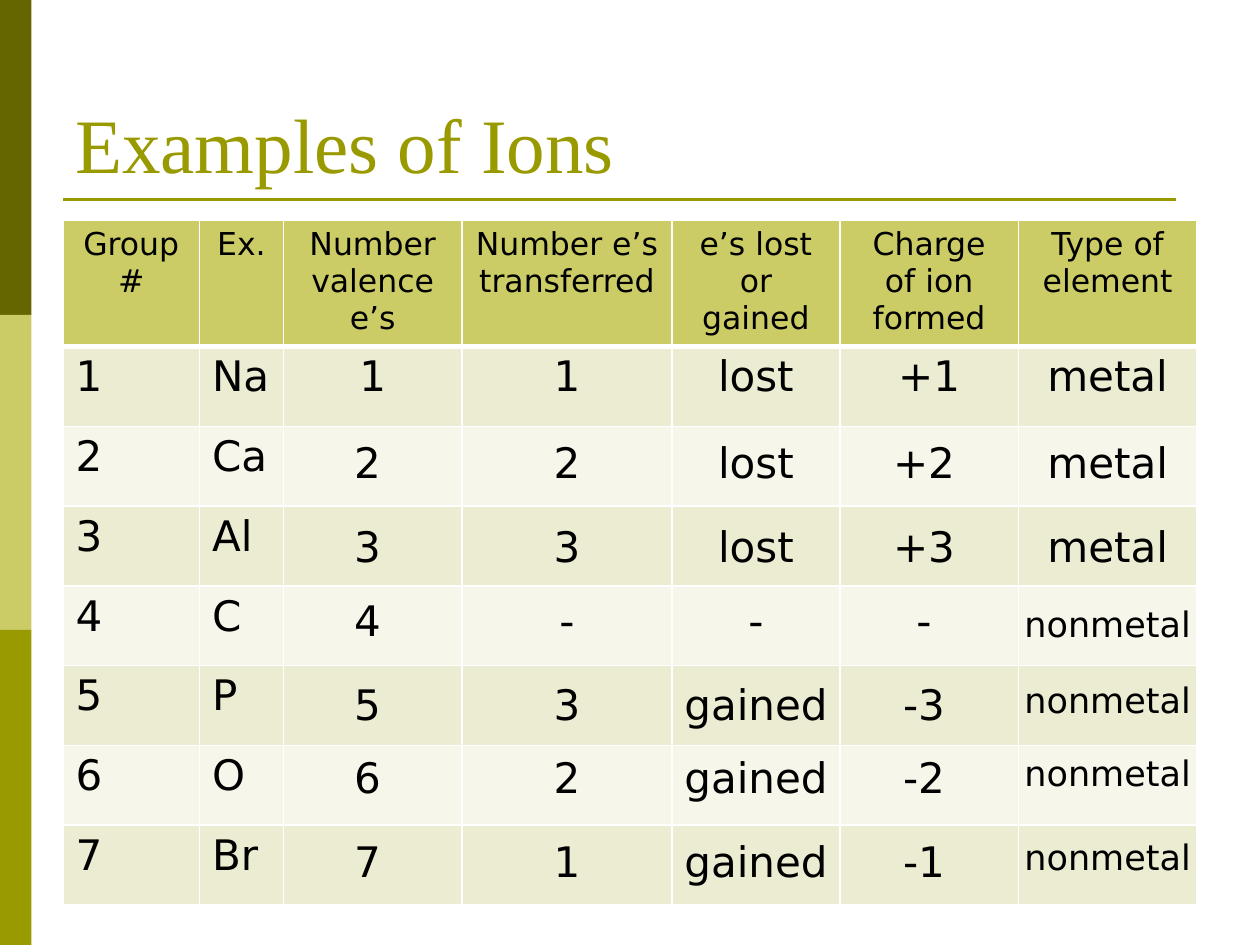
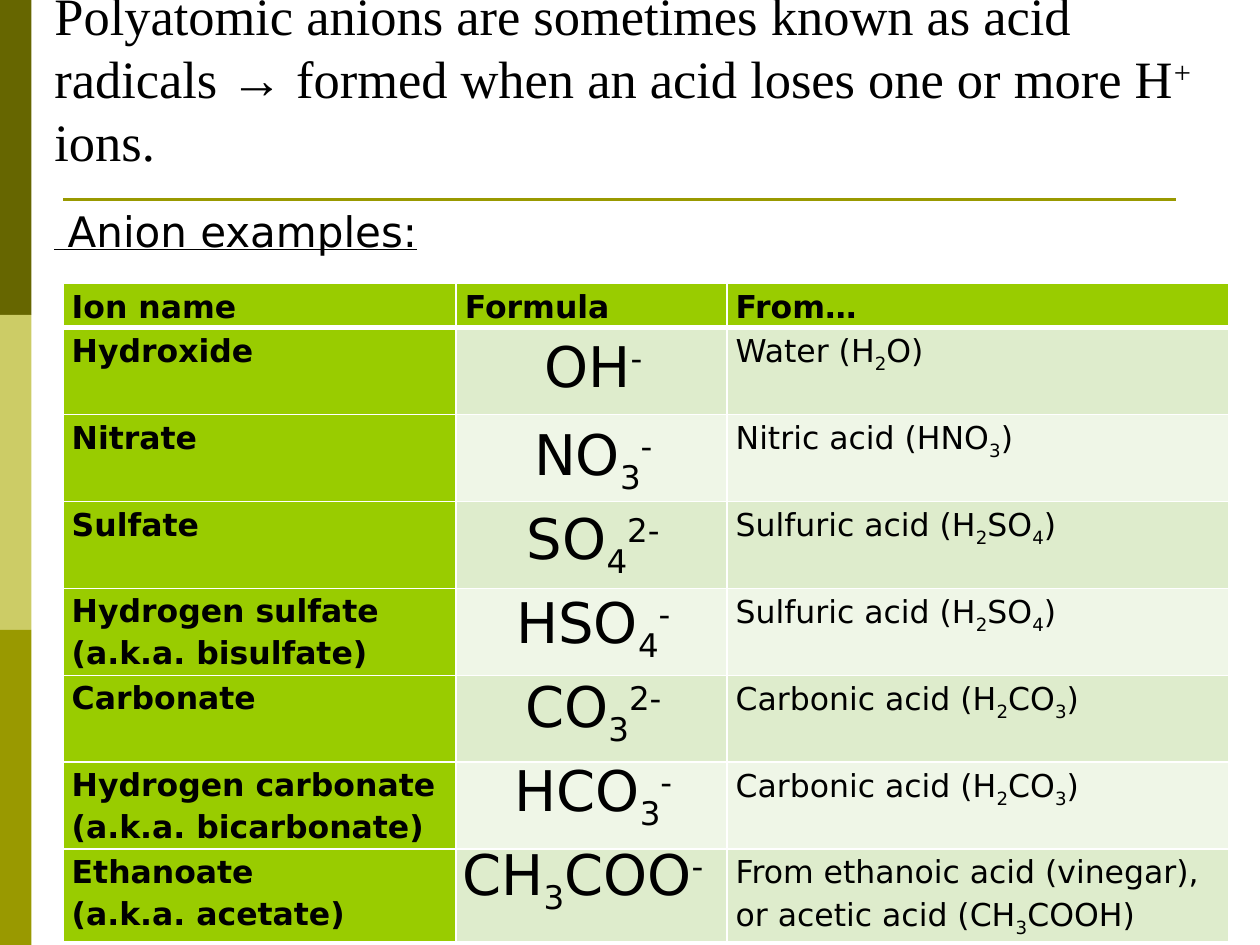
from lxml.etree import SubElement
from pptx import Presentation
from pptx.dml.color import RGBColor
from pptx.enum.shapes import MSO_CONNECTOR, MSO_SHAPE
from pptx.enum.text import MSO_ANCHOR, PP_ALIGN
from pptx.oxml import parse_xml
from pptx.oxml.ns import nsdecls, qn
from pptx.util import Pt

# Shared look
DARK_OLIVE, LIGHT_OLIVE, OLIVE = "666600", "CCCC66", "999900"
LIME, BLACK, WHITE = "99CC00", "000000", "FFFFFF"
OLIVE_BANDS = ("ECECD3", "F6F6EA")
LIME_BANDS = ("DEECCC", "EFF6E7")
BODY_FONT, TITLE_FONT = "DejaVu Sans", "Times New Roman"
BASELINES = {"_": "-25000", "^": "30000"}
CENTER = PP_ALIGN.CENTER

# Ions: group, symbol, valence electrons, transferred, lost or gained, charge, type
ION_HEADERS = ["Group #", "Ex.", "Number valence e’s", "Number e’s transferred",
               "e’s lost or gained", "Charge of ion formed", "Type of element"]
IONS = [
    ["1", "Na", "1", "1", "lost", "+1", "metal"],
    ["2", "Ca", "2", "2", "lost", "+2", "metal"],
    ["3", "Al", "3", "3", "lost", "+3", "metal"],
    ["4", "C", "4", "-", "-", "-", "nonmetal"],
    ["5", "P", "5", "3", "gained", "-3", "nonmetal"],
    ["6", "O", "6", "2", "gained", "-2", "nonmetal"],
    ["7", "Br", "7", "1", "gained", "-1", "nonmetal"],
]
ION_COLUMNS = [78, 48, 102, 120, 96, 102, 102]
ANSWER_CENTERS = [210, 324, 432, 528, 633]
ANSWER_TOPS = [246, 294, 336, 384, 426, 474]
ANSWER_WIDTHS = {"gained": 96, "metal": 90, "nonmetal": 114}

# Anions: name, formula, source; "|" parts runs, "_" lowers and "^" raises one
ANION_HEADERS = ["Ion name", "Formula", "From…"]
ANIONS = [
    ["Hydroxide", "OH|^-", "Water (H|_2|O)"],
    ["Nitrate", "NO|_3|^-", "Nitric acid (HNO|_3|)"],
    ["Sulfate", "SO|_4|^2-", "Sulfuric acid (H|_2|SO|_4|)"],
    ["Hydrogen sulfate (a.k.a. bisulfate)", "HSO|_4|^-", "Sulfuric acid (H|_2|SO|_4|)"],
    ["Carbonate", "CO|_3|^2-", "Carbonic acid (H|_2|CO|_3|)"],
    ["Hydrogen carbonate (a.k.a. bicarbonate)", "HCO|_3|^-", "Carbonic acid (H|_2|CO|_3|)"],
    ["Ethanoate\n(a.k.a. acetate)", "CH|_3|COO|^-",
     "From ethanoic acid (vinegar), or acetic acid (CH|_3|COOH)"],
]
ANION_COLUMNS = [224.64, 154.8, 286.56]


def rgb(color):
    return RGBColor.from_string(color)


def write_text(text_frame, text, size=24, font=BODY_FONT, color=BLACK, bold=False,
               underline=False, align=PP_ALIGN.LEFT, line_spacing=None, space_before=0):
    paragraph = text_frame.paragraphs[0]
    paragraph.alignment = align
    paragraph.space_before = Pt(space_before)
    if line_spacing:
        paragraph.line_spacing = line_spacing
    for piece in text.split("|"):
        baseline = BASELINES.get(piece[0])
        for number, line in enumerate((piece[1:] if baseline else piece).split("\n")):
            if number:
                paragraph.add_line_break()
            run = paragraph.add_run()
            run.text = line
            run.font.name = font
            run.font.size = Pt(size)
            run.font.bold = bold
            run.font.underline = underline
            run.font.color.rgb = rgb(color)
            if baseline:
                run._r.get_or_add_rPr().set("baseline", baseline)


def add_text(slide, text, left, top, width, height, anchor=MSO_ANCHOR.TOP, **text_format):
    text_frame = slide.shapes.add_textbox(Pt(left), Pt(top), Pt(width), Pt(height)).text_frame
    text_frame.word_wrap = True
    text_frame.vertical_anchor = anchor
    write_text(text_frame, text, **text_format)


def add_title(slide, text, left, top, width, **text_format):
    add_text(slide, text, left, top, width, 90, anchor=MSO_ANCHOR.BOTTOM,
             font=TITLE_FONT, **text_format)


def add_frame(slide):
    """Side band in three colours and the rule below the title."""
    for number, color in enumerate((DARK_OLIVE, LIGHT_OLIVE, OLIVE)):
        band = slide.shapes.add_shape(MSO_SHAPE.RECTANGLE, 0, Pt(180 * number), Pt(18), Pt(180))
        band.shadow.inherit = False
        band.fill.solid()
        band.fill.fore_color.rgb = rgb(color)
        band.line.fill.background()
    rule = slide.shapes.add_connector(MSO_CONNECTOR.STRAIGHT, Pt(36), Pt(114), Pt(672), Pt(114))
    rule.line.color.rgb = rgb(OLIVE)
    rule.line.width = Pt(1.5)
    SubElement(rule._element.spPr, qn("a:effectLst"))


def set_borders(cell, top, bottom):
    properties = cell._tc.get_or_add_tcPr()
    for position, (side, width) in enumerate(zip("LRTB", (1, 1, top, bottom))):
        properties.insert(position, parse_xml(
            f'<a:ln{side} {nsdecls("a")} w="{Pt(width)}"><a:solidFill>'
            f'<a:srgbClr val="{WHITE}"/></a:solidFill></a:ln{side}>'))


def add_grid(slide, top, column_widths, header_height, row_height, row_count):
    heights = [header_height] + [row_height] * row_count
    table = slide.shapes.add_table(len(heights), len(column_widths), Pt(36), Pt(top),
                                   Pt(sum(column_widths)), Pt(sum(heights))).table
    table.horz_banding = False
    for column, width in zip(table.columns, column_widths):
        column.width = Pt(width)
    for row, height in zip(table.rows, heights):
        row.height = Pt(height)
    return table


def fill_cell(table, row, column, text, color, margins, **text_format):
    cell = table.cell(row, column)
    cell.fill.solid()
    cell.fill.fore_color.rgb = rgb(color)
    cell.margin_left = cell.margin_right = Pt(margins[0])
    cell.margin_top = cell.margin_bottom = Pt(margins[1])
    set_borders(cell, top=3 if row == 1 else 1, bottom=3 if row == 0 else 1)
    if text:
        write_text(cell.text_frame, text, **text_format)


def build_ions_slide(slide):
    add_title(slide, "Examples of Ions", 36, 21.6, 648, size=44, color=OLIVE)

    # Table: only the first ion has its answers in the cells
    table = add_grid(slide, 126, ION_COLUMNS, 72, 45.6, len(IONS))
    for row, values in enumerate([ION_HEADERS] + IONS):
        for column, value in enumerate(values):
            fill_cell(table, row, column, value if row < 2 or column < 2 else "",
                      OLIVE_BANDS[(row - 1) % 2] if row else LIGHT_OLIVE, (7.2, 3.6),
                      size=24 if row else 18,
                      align=PP_ALIGN.LEFT if row and column < 2 else CENTER)

    # Answers laid over the other rows
    for top, ion in zip(ANSWER_TOPS, IONS[1:]):
        for center, answer in zip(ANSWER_CENTERS, ion[2:]):
            width = ANSWER_WIDTHS.get(answer, 72)
            is_small = answer == "nonmetal"
            drop = 4.5 if is_small and ion[0] == "4" else 0
            add_text(slide, answer, center - width / 2, top + drop, width,
                     31.5 if is_small else 36.5, size=20 if is_small else 24, align=CENTER)


def build_anions_slide(slide):
    add_title(slide, "Polyatomic anions are sometimes known as acid radicals → "
              "formed when an acid loses one or more H|^+| ions.", 24, 12, 684, size=30)
    add_text(slide, " Anion examples:", 24, 114, 648, 356, underline=True, space_before=2)

    # Table with an empty formula column
    table = add_grid(slide, 162, ANION_COLUMNS, 25.2, 49.68, len(ANIONS))
    for row, values in enumerate([ANION_HEADERS] + ANIONS):
        for column, value in enumerate(values):
            is_heading = row == 0 or column == 0
            fill_cell(table, row, column, "" if row and column == 1 else value,
                      LIME if is_heading else LIME_BANDS[(row - 1) % 2], (5, 0),
                      size=18, bold=is_heading, line_spacing=1.15)

    # Formulas laid over the column
    for number, (_, formula, _) in enumerate(ANIONS):
        is_last = number == len(ANIONS) - 1
        add_text(slide, formula, 252 if is_last else 264, 188 + 48 * number if number else 186,
                 162 if is_last else 150, 46, size=32, align=CENTER)


def main():
    presentation = Presentation()
    presentation.slide_width, presentation.slide_height = Pt(720), Pt(540)
    for build in (build_ions_slide, build_anions_slide):
        slide = presentation.slides.add_slide(presentation.slide_layouts[6])
        add_frame(slide)
        build(slide)
    presentation.save("out.pptx")


if __name__ == "__main__":
    main()
